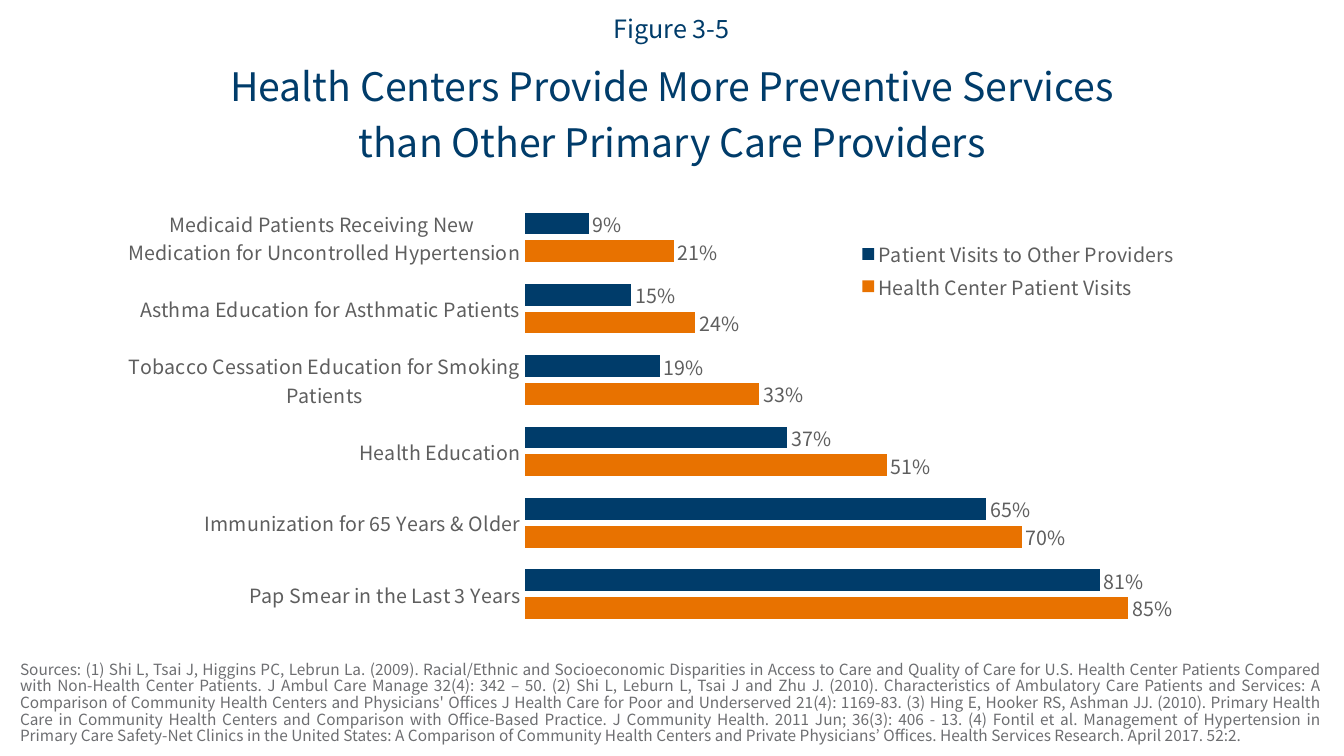
from pptx import Presentation
from pptx.chart.data import CategoryChartData
from pptx.dml.color import RGBColor
from pptx.enum.chart import XL_CHART_TYPE, XL_LABEL_POSITION, XL_LEGEND_POSITION, XL_TICK_MARK
from pptx.enum.text import MSO_ANCHOR, PP_ALIGN
from pptx.oxml import parse_xml
from pptx.oxml.ns import nsdecls
from pptx.util import Pt

FONT = "Noto Sans CJK JP"
COLORS = {"navy": "003C6A", "orange": "E87200", "label": "5E5E5E", "source": "6D6E71"}

deck = Presentation()
deck.slide_width, deck.slide_height = Pt(960), Pt(540)
slide = deck.slides.add_slide(deck.slide_layouts[6])


def style_font(font, size, color):
    font.name = FONT
    font.size = Pt(size)
    font.color.rgb = RGBColor.from_string(COLORS[color])


def set_layout(element, position, left, top, width, height, target=""):
    layout = parse_xml(
        f'<c:layout {nsdecls("c")}><c:manualLayout>{target}'
        '<c:xMode val="edge"/><c:yMode val="edge"/>'
        f'<c:x val="{left}"/><c:y val="{top}"/><c:w val="{width}"/><c:h val="{height}"/>'
        '</c:manualLayout></c:layout>')
    for old in element.findall(layout.tag):
        element.remove(old)
    element.insert(position, layout)


sources = " ".join([
    "Sources:",
    "(1) Shi L, Tsai J, Higgins PC, Lebrun La. (2009). Racial/Ethnic and Socioeconomic Disparities in "
    "Access to Care and Quality of Care for U.S. Health Center Patients Compared with Non-Health Center "
    "Patients. J Ambul Care Manage 32(4): 342 – 50.",
    "(2) Shi L, Leburn L, Tsai J and Zhu J. (2010). Characteristics of Ambulatory Care Patients and "
    "Services: A Comparison of Community Health Centers and Physicians' Offices J Health Care for Poor "
    "and Underserved 21(4): 1169-83.",
    "(3) Hing E, Hooker RS, Ashman JJ. (2010). Primary Health Care in Community Health Centers and "
    "Comparison with Office-Based Practice. J Community Health. 2011 Jun; 36(3): 406 - 13.",
    "(4) Fontil et al. Management of Hypertension in Primary Care Safety-Net Clinics in the United "
    "States: A Comparison of Community Health Centers and Private Physicians’ Offices. Health Services "
    "Research. April 2017. 52:2.",
])
headline = ["Health Centers Provide More Preventive Services", "than Other Primary Care Providers"]

texts = [
    ([sources], (7.2, 463.7, 944.6, 72), 11, "source", PP_ALIGN.JUSTIFY, MSO_ANCHOR.BOTTOM, 1),
    (headline, (34.6, 44.6, 890.6, 85.7), 28, "navy", PP_ALIGN.CENTER, MSO_ANCHOR.TOP, 10),
    (["Figure 3-5"], (385.2, 4.3, 188.6, 34.6), 18, "navy", PP_ALIGN.CENTER, MSO_ANCHOR.MIDDLE, 10),
]
for lines, box, size, color, align, anchor, space in texts:
    frame = slide.shapes.add_textbox(*map(Pt, box)).text_frame
    frame.word_wrap = True
    frame.vertical_anchor = anchor
    frame.text = "\n".join(lines)
    for paragraph in frame.paragraphs:
        paragraph.alignment = align
        paragraph.line_spacing = 0.9
        paragraph.space_before = Pt(space)
        style_font(paragraph.font, size, color)

services = CategoryChartData(number_format="0%")
services.categories = [
    "Pap Smear in the Last 3 Years",
    "Immunization for 65 Years & Older",
    "Health Education",
    "Tobacco Cessation Education for Smoking Patients",
    "Asthma Education for Asthmatic Patients",
    "Medicaid Patients Receiving New \nMedication for Uncontrolled Hypertension",
]
services.add_series("Health Center Patient Visits", (0.85, 0.7, 0.51, 0.33, 0.24, 0.21))
services.add_series("Patient Visits to Other Providers", (0.81, 0.65, 0.37, 0.19, 0.15, 0.09))
chart = slide.shapes.add_chart(
    XL_CHART_TYPE.BAR_CLUSTERED, Pt(48.2), Pt(144), Pt(859.7), Pt(306), services).chart
chart.has_title = False
style_font(chart.font, 14, "label")

bars = chart.plots[0]
bars.vary_by_categories = False
bars.gap_width = 100
bars.overlap = -27
for visits, color in zip(bars.series, ("orange", "navy")):
    visits.format.fill.solid()
    visits.format.fill.fore_color.rgb = RGBColor.from_string(COLORS[color])
    percents = visits.data_labels
    percents.show_value = True
    percents.position = XL_LABEL_POSITION.OUTSIDE_END
    percents.number_format = "0%"
    percents.number_format_is_linked = False
    style_font(percents.font, 14, "label")

service_axis = chart.category_axis
service_axis.major_tick_mark = XL_TICK_MARK.NONE
service_axis.format.line.fill.background()
style_font(service_axis.tick_labels.font, 14, "label")
share_axis = chart.value_axis
share_axis.visible = False
share_axis.has_major_gridlines = False
share_axis.minimum_scale, share_axis.maximum_scale = 0, 1

chart.has_legend = True
legend = chart.legend
legend.position = XL_LEGEND_POSITION.TOP
legend.include_in_layout = False
style_font(legend.font, 14, "label")
set_layout(legend._element, 1, 0.65, 0.08, 0.28, 0.16)
set_layout(chart._chartSpace.chart.plotArea, 0, 0.38, 0, 0.59, 1, '<c:layoutTarget val="inner"/>')

deck.save("out.pptx")
